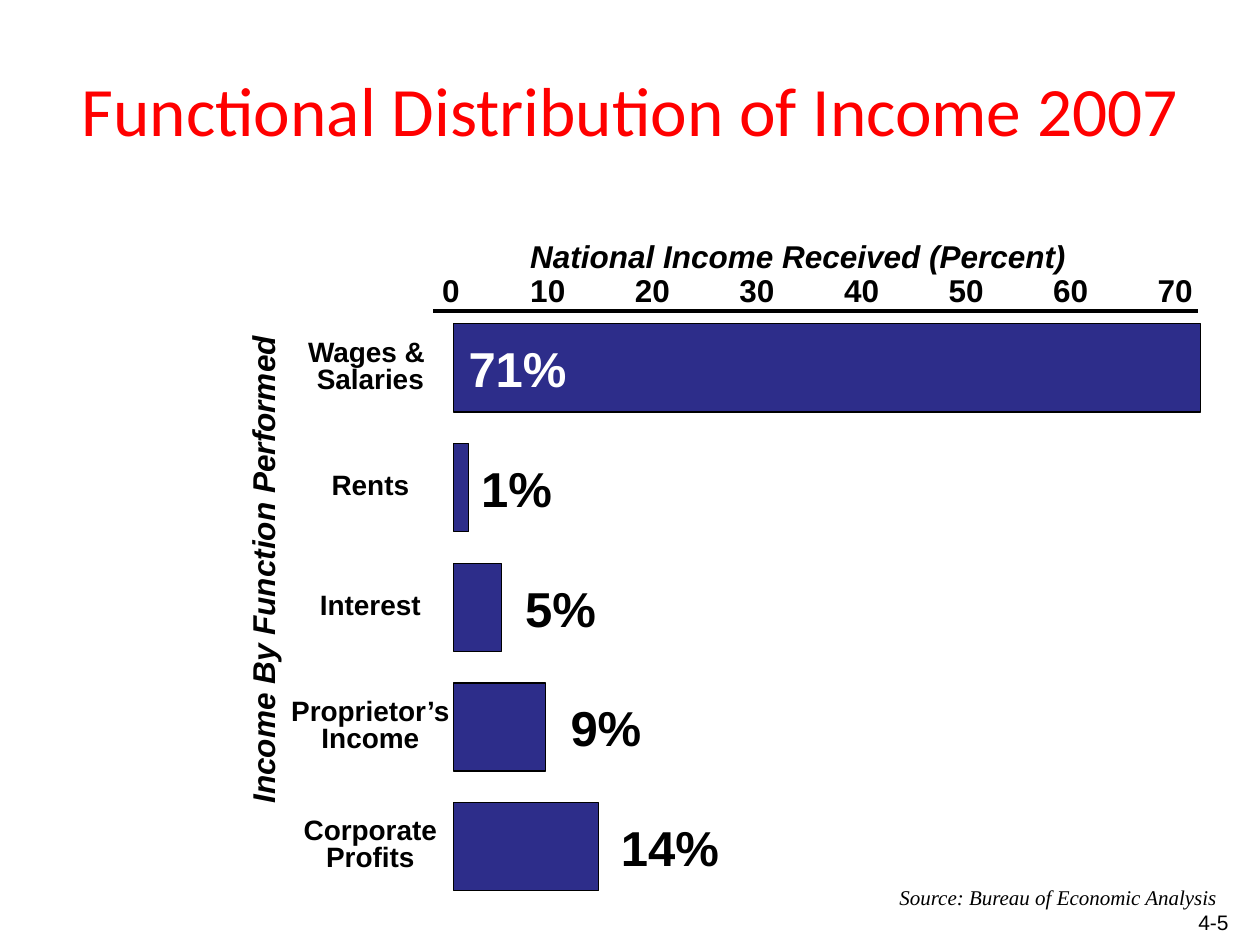
from lxml import etree
from pptx import Presentation
from pptx.dml.color import RGBColor
from pptx.enum.shapes import MSO_CONNECTOR, MSO_SHAPE
from pptx.enum.text import MSO_ANCHOR, MSO_AUTO_SIZE, PP_ALIGN
from pptx.oxml.ns import qn
from pptx.util import Inches, Pt

COLORS = {"title": "FF0000", "bar": "2D2D8A", "ink": "000000", "white": "FFFFFF"}

# Category lines, bar width, value, value left, value box width, value colour
ROWS = [
    (["Wages & ", "Salaries"], 5.93, "71%", 3.62, 0.98, "white"),
    (["Rents"], 0.12, "1%", 3.72, 0.76, "ink"),
    (["Interest"], 0.38, "5%", 4.07, 0.76, "ink"),
    (["Proprietor’s", "Income"], 0.73, "9%", 4.43, 0.76, "ink"),
    (["Corporate", "Profits"], 1.15, "14%", 4.83, 0.98, "ink"),
]
BAR_LEFT, BAR_TOP, BAR_HEIGHT, BAR_PITCH = 3.6, 2.57, 0.7, 0.95
LABEL_CENTER, LABEL_WIDTH = 2.94, 1.46
TICK_FIRST, TICK_STEP = 0.7, 0.83


def rgb(name):
    return RGBColor.from_string(COLORS[name])


def format_paragraph(p, size, color="ink", font="Arial", bold=False, italic=False,
                     align=PP_ALIGN.LEFT, spacing=None):
    p.alignment = align
    if spacing:
        p.line_spacing = spacing
    p.font.size, p.font.name = Pt(size), font
    p.font.bold, p.font.italic = bold, italic
    p.font.color.rgb = rgb(color)


def add_title(slide, text):
    title = slide.shapes.title
    title.left, title.top = Inches(0.5), Inches(0.3)
    title.width, title.height = Inches(9), Inches(1.25)
    tf = title.text_frame
    tf.text = text
    tf.vertical_anchor = MSO_ANCHOR.MIDDLE
    format_paragraph(tf.paragraphs[0], 39.6, "title", "Calibri",
                     align=PP_ALIGN.CENTER, spacing=0.8)


def add_text(slide, lines, left, top, width, height, size, wrap=False, **style):
    sp = slide.shapes.add_textbox(Inches(left), Inches(top), Inches(width), Inches(height))
    tf = sp.text_frame
    tf.word_wrap = wrap
    tf.auto_size = MSO_AUTO_SIZE.SHAPE_TO_FIT_TEXT
    for i, line in enumerate(lines):
        p = tf.add_paragraph() if i else tf.paragraphs[0]
        p.text = line
        format_paragraph(p, size, **style)
    return sp


def add_bar(slide, top, width):
    sp = slide.shapes.add_shape(MSO_SHAPE.RECTANGLE, Inches(BAR_LEFT), Inches(top),
                                Inches(width), Inches(BAR_HEIGHT))
    sp.shadow.inherit = False
    sp.fill.solid()
    sp.fill.fore_color.rgb = rgb("bar")
    sp.line.color.rgb = rgb("ink")
    sp.line.width = Pt(0.75)


def add_row(slide, index, row):
    lines, bar_width, value, value_left, value_width, color = row
    top = BAR_TOP + index * BAR_PITCH
    center = top + BAR_HEIGHT / 2
    add_bar(slide, top, bar_width)
    label_height = 0.53 if len(lines) == 2 else 0.31
    add_text(slide, lines, LABEL_CENTER - LABEL_WIDTH / 2, center - label_height / 2,
             LABEL_WIDTH, label_height, 16, bold=True,
             align=PP_ALIGN.CENTER, spacing=0.8)
    add_text(slide, [value], value_left, center - 0.28, value_width, 0.57, 28,
             bold=True, color=color)


def add_axis(slide):
    # Scale numbers, spaced by tab stops
    ticks = [str(n) for n in range(0, 80, 10)]
    sp = add_text(slide, ["\t".join(ticks)], 3.41, 2.1, 6.18, 0.4, 18, wrap=True, bold=True)
    pPr = sp.text_frame.paragraphs[0]._p.get_or_add_pPr()
    tabs = etree.Element(qn("a:tabLst"))
    for i in range(len(ticks) - 1):
        etree.SubElement(tabs, qn("a:tab"), algn="l",
                         pos=str(Inches(TICK_FIRST + i * TICK_STEP)))
    pPr.find(qn("a:defRPr")).addprevious(tabs)

    # Axis line
    line = slide.shapes.add_connector(MSO_CONNECTOR.STRAIGHT, Inches(3.44), Inches(2.47),
                                      Inches(9.51), Inches(2.47))
    line.line.color.rgb = rgb("ink")
    line.line.width = Pt(2.25)
    etree.SubElement(line._element.spPr, qn("a:effectLst"))


def main():
    prs = Presentation()
    prs.slide_width, prs.slide_height = Inches(10), Inches(7.5)
    slide = prs.slides.add_slide(prs.slide_layouts[5])
    add_title(slide, "Functional Distribution of Income 2007")

    # Bars with their categories and values
    for i, row in enumerate(ROWS):
        add_row(slide, i, row)

    # Axes and their titles
    add_text(slide, ["National Income Received (Percent)"], 4.11, 1.83, 4.45, 0.4, 18,
             bold=True, italic=True)
    add_axis(slide)
    side = add_text(slide, ["Income By Function Performed"], 0.13, 4.32, 3.91, 0.4, 18,
                    bold=True, italic=True)
    side.rotation = 270

    # Source and page number
    add_text(slide, ["Source: Bureau of Economic Analysis"], 7.04, 6.97, 2.74, 0.3, 12,
             font="Times New Roman", italic=True)
    add_text(slide, ["4-5"], 7.52, 7.17, 2.33, 0.27, 12, wrap=True, align=PP_ALIGN.RIGHT)

    prs.save("out.pptx")


if __name__ == "__main__":
    main()
